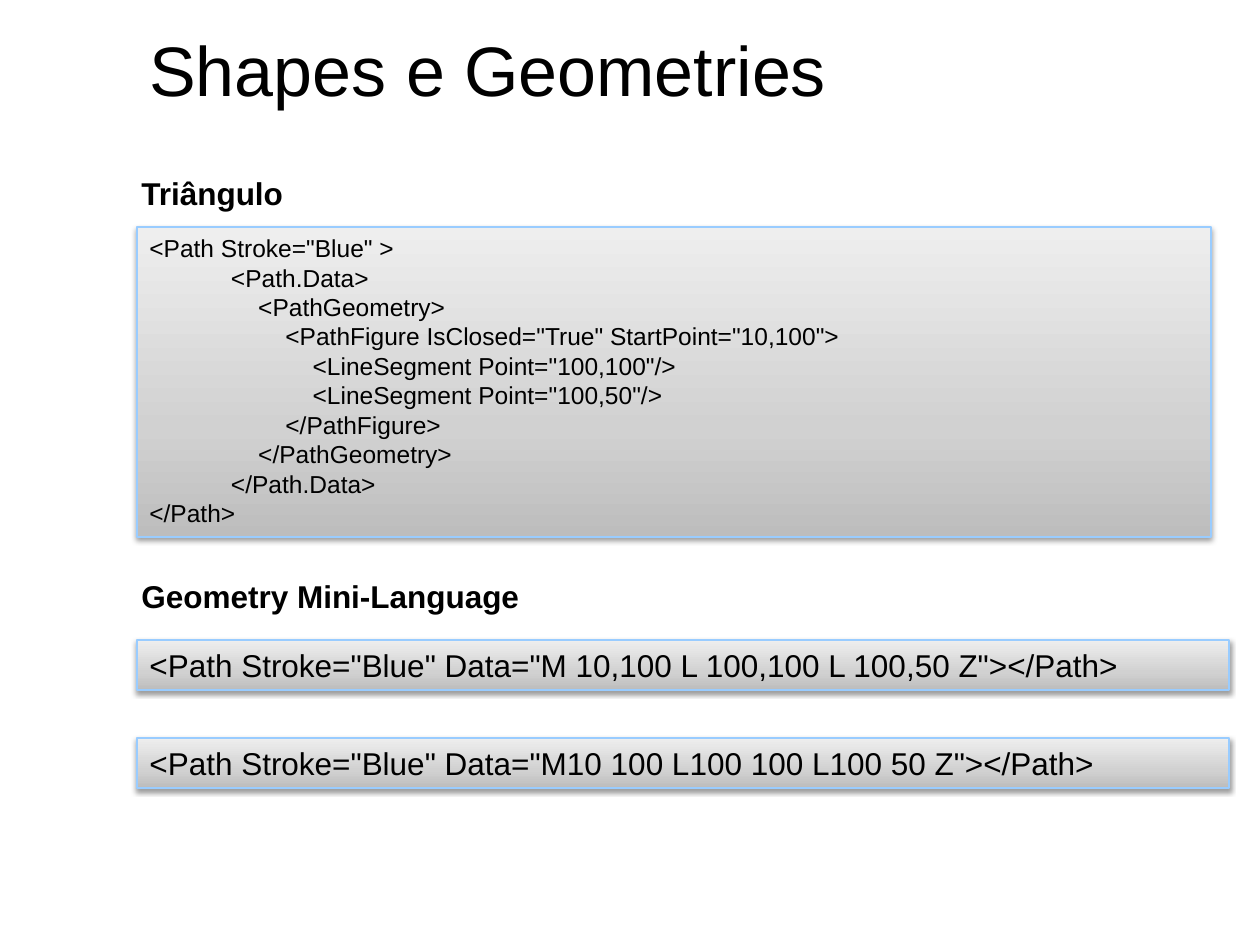
"""Build the slide on shapes and geometries in path markup."""
from copy import deepcopy

from lxml import etree
from pptx import Presentation
from pptx.dml.color import RGBColor
from pptx.enum.shapes import MSO_SHAPE
from pptx.enum.text import MSO_ANCHOR, MSO_AUTO_SIZE, PP_ALIGN
from pptx.oxml.ns import qn
from pptx.util import Emu, Pt

RECTANGLE = MSO_SHAPE.RECTANGLE
TOP = MSO_ANCHOR.TOP
GROW = MSO_AUTO_SIZE.SHAPE_TO_FIT_TEXT
LEFT = PP_ALIGN.LEFT

EMU_PER_PX = 914400 / 126
PANEL_LEFT = 137
HEADING_LEFT = 129
PANEL_STOPS = [(0, "BDBDBD"), (0.35, "D1D1D1"), (1, "EEEEEE")]
TRIANGLE_CODE = """<Path Stroke="Blue" >
            <Path.Data>
                <PathGeometry>
                    <PathFigure IsClosed="True" StartPoint="10,100">
                        <LineSegment Point="100,100"/>
                        <LineSegment Point="100,50"/>
                    </PathFigure>
                </PathGeometry>
            </Path.Data>
</Path>"""
MINI_LANGUAGE_CODE = [
    '<Path Stroke="Blue" Data="M 10,100 L 100,100 L 100,50 Z"></Path>',
    '<Path Stroke="Blue" Data="M10 100 L100 100 L100 50 Z"></Path>',
]


def px(length):
    """Turn pixels into EMU."""
    return Emu(round(length * EMU_PER_PX))


def color(value):
    """Turn a hex string into a colour."""
    return RGBColor.from_string(value)


def write(shape, text, size, bold=False):
    """Put the lines of a text into a shape."""
    frame = shape.text_frame
    frame.text = text
    layout = {"word_wrap": True, "auto_size": GROW, "vertical_anchor": TOP}
    for name, value in layout.items():
        setattr(frame, name, value)
    for paragraph in frame.paragraphs:
        paragraph.alignment = LEFT
        font = paragraph.font
        for name, value in {"name": "Arial", "size": Pt(size), "bold": bold}.items():
            setattr(font, name, value)
        font.color.rgb = color("000000")


def add_label(slide, box, text, size, bold=False):
    """Add a plain text box."""
    write(slide.shapes.add_textbox(*map(px, box)), text, size, bold)


def fill_panel(panel):
    """Give a panel its three-stop vertical gradient."""
    panel.fill.gradient()
    panel.fill.gradient_angle = 90
    first_stop = panel.element.spPr.find(".//" + qn("a:gs"))
    first_stop.addnext(deepcopy(first_stop))
    for stop, (position, shade) in zip(panel.fill.gradient_stops, PANEL_STOPS):
        stop.position = position
        stop.color.rgb = color(shade)


def cast_shadow(panel):
    """Give a panel a soft shadow below it."""
    panel.shadow.inherit = False
    effects = panel.element.spPr.find(qn("a:effectLst"))
    shadow = etree.SubElement(
        effects, qn("a:outerShdw"), blurRad="40000", dist="20000",
        dir="5400000", rotWithShape="0")
    black = etree.SubElement(shadow, qn("a:srgbClr"), val="000000")
    etree.SubElement(black, qn("a:alpha"), val="38000")


def add_code_panel(slide, box, code, size):
    """Add a shaded panel that holds code."""
    panel = slide.shapes.add_shape(RECTANGLE, *map(px, box))
    fill_panel(panel)
    panel.line.color.rgb = color("99CCFF")
    panel.line.width = Pt(0.75)
    cast_shadow(panel)
    write(panel, code, size)


def main():
    """Build and save the slide."""
    deck = Presentation()
    deck.slide_width, deck.slide_height = px(1260), px(945)
    slide = deck.slides.add_slide(deck.slide_layouts[6])
    add_label(slide, (PANEL_LEFT, 20, 759, 97), "Shapes e Geometries", 40)
    for top, heading in [(168, "Triângulo"), (571, "Geometry Mini-Language")]:
        add_label(slide, (HEADING_LEFT, top, 1113, 50), heading, 18, bold=True)
    add_code_panel(slide, (PANEL_LEFT, 227, 1074, 310), TRIANGLE_CODE, 14)
    for row, code in enumerate(MINI_LANGUAGE_CODE):
        add_code_panel(slide, (PANEL_LEFT, 640 + 98 * row, 1092, 50), code, 18)
    deck.save("out.pptx")


if __name__ == "__main__":
    main()
